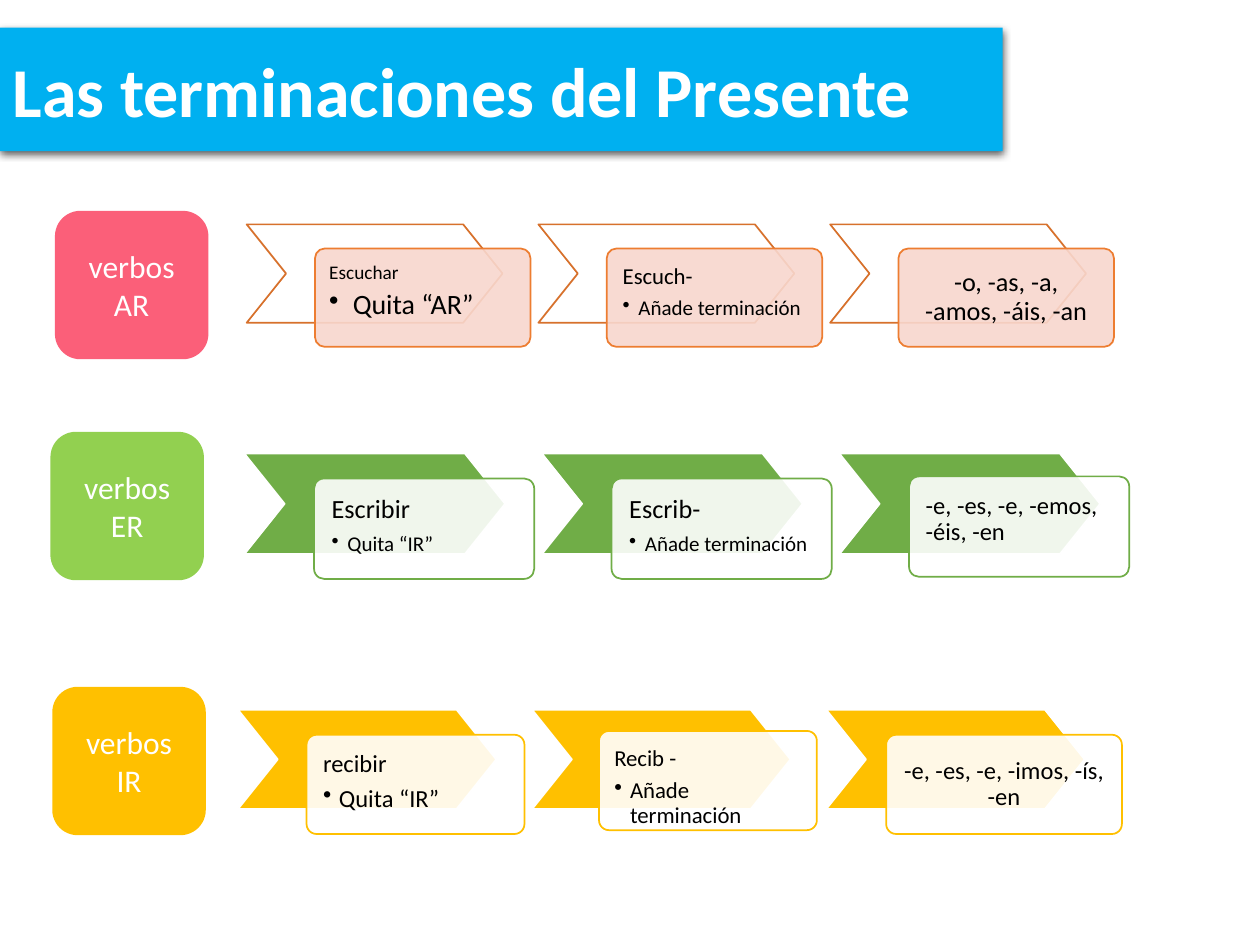
from lxml.etree import SubElement
from pptx import Presentation
from pptx.dml.color import RGBColor
from pptx.enum.shapes import MSO_SHAPE as Preset
from pptx.enum.text import MSO_ANCHOR as Anchor, MSO_AUTO_SIZE as AutoSize, PP_ALIGN as Align
from pptx.oxml import parse_xml
from pptx.oxml.ns import nsdecls, qn
from pptx.util import Pt

COLORS = {
    "white": "FFFFFF", "black": "000000", "sky": "00B0F0",
    "pink": "FB5F79", "rust": "D7712C", "orange": "ED7D31", "peach": "F8D7CE",
    "lime": "92D050", "green": "70AD47", "gold": "FFC000",
}


class VerbSlide:
    font = "Calibri"
    line_width = 1

    def __init__(self, presentation):
        self.slide = presentation.slides.add_slide(presentation.slide_layouts[5])

    def color(self, name):
        return RGBColor.from_string(COLORS[name])

    def place(self, shape, bounds):
        for name, value in zip(("left", "top", "width", "height"), bounds):
            setattr(shape, name, Pt(value))

    def format_frame(self, frame, inset=None, anchor=Anchor.MIDDLE):
        values = {"word_wrap": True, "auto_size": AutoSize.NONE, "vertical_anchor": anchor}
        if inset is not None:
            for side in ("left", "top", "right", "bottom"):
                values[f"margin_{side}"] = Pt(inset)
        for name, value in values.items():
            setattr(frame, name, value)

    def add_text(self, paragraph, text, size, color, bold=False, **layout):
        run = paragraph.add_run()
        run.text = text
        for name, value in {"name": self.font, "size": Pt(size), "bold": bold}.items():
            setattr(run.font, name, value)
        run.font.color.rgb = self.color(color)
        for name, value in layout.items():
            setattr(paragraph, name, value)

    def title(self, text, bounds):
        shape = self.slide.shapes.title
        self.place(shape, bounds)
        properties = shape.element.spPr
        properties.append(parse_xml(
            f'<a:prstGeom {nsdecls("a")} prst="roundRect"><a:avLst>'
            '<a:gd name="adj" fmla="val 16700"/></a:avLst></a:prstGeom>'))
        shape.fill.solid()
        shape.fill.fore_color.rgb = self.color("sky")
        properties.append(parse_xml(
            f'<a:effectLst {nsdecls("a")}><a:outerShdw blurRad="{Pt(4.5)}" dist="{Pt(1.5)}" '
            f'dir="5400000" rotWithShape="0"><a:srgbClr val="{COLORS["black"]}">'
            '<a:alpha val="63000"/></a:srgbClr></a:outerShdw></a:effectLst>'))
        self.format_frame(shape.text_frame)
        self.add_text(shape.text_frame.paragraphs[0], text, 40, "white", True, alignment=Align.LEFT)

    def shape(self, preset, bounds, fill, line, adjustment, opacity=100):
        shape = self.slide.shapes.add_shape(preset, *map(Pt, bounds))
        shape.shadow.inherit = False
        shape.adjustments[0] = adjustment
        shape.fill.solid()
        shape.fill.fore_color.rgb = self.color(fill)
        shape.line.color.rgb = self.color(line)
        shape.line.width = Pt(self.line_width)
        if opacity < 100:
            color = shape.element.spPr.find(qn("a:solidFill")).find(qn("a:srgbClr"))
            SubElement(color, qn("a:alpha")).set("val", str(opacity * 1000))
        return shape

    def label(self, lines, left, top, color):
        shape = self.shape(Preset.ROUNDED_RECTANGLE, (left, top, 86.7, 83.8), color, color, 0.167)
        frame = shape.text_frame
        self.format_frame(frame)
        for index, text in enumerate(lines):
            paragraph = frame.add_paragraph() if index else frame.paragraphs[0]
            self.add_text(paragraph, text, 18, "white", alignment=Align.CENTER)

    def chevron(self, bounds, fill, line):
        self.shape(Preset.CHEVRON, bounds, fill, line, 0.4)

    def card(self, bounds, fill, line, heading, size, inset, bullet=None, centered=False):
        shape = self.shape(Preset.ROUNDED_RECTANGLE, bounds, fill, line, 0.1, 90)
        frame = shape.text_frame
        self.format_frame(frame, inset, Anchor.MIDDLE if centered else Anchor.TOP)
        self.add_text(frame.paragraphs[0], heading, size, "black", line_spacing=0.9,
                      space_after=Pt(0.35 * size),
                      alignment=Align.CENTER if centered else Align.LEFT)
        if bullet:
            self.bullet(frame.add_paragraph(), *bullet)

    def bullet(self, paragraph, text, size, indent):
        self.add_text(paragraph, text, size, "black", level=1, line_spacing=0.9,
                      space_after=Pt(0.15 * size), alignment=Align.LEFT)
        properties = paragraph._p.get_or_add_pPr()
        properties.set("marL", str(Pt(indent)))
        properties.set("indent", str(-Pt(indent)))
        SubElement(properties, qn("a:buChar")).set("char", "•")


ROWS = [
    {
        "label": (["verbos", "AR"], 31.9, 121, "pink"),
        "chevron": (141, 128.2, 146.2, 56.2), "step": 166.7,
        "chevron_colors": ("white", "rust"), "card_colors": ("peach", "orange"),
        "offset": (39, 13.8), "card_width": 123.2,
        "cards": [
            {"heading": "Escuchar", "size": 11, "inset": 6.5, "bullet": ("Quita “AR”", 16, 13.5)},
            {"heading": "Escuch-", "size": 13, "inset": 7.5, "bullet": ("Añade terminación", 12, 9)},
            {"heading": "-o, -as, -a, -amos, -áis, -an", "size": 15, "inset": 8.5, "centered": True},
        ],
    },
    {
        "label": (["verbos ER"], 29.3, 247.3, "lime"),
        "chevron": (139.7, 259.2, 149, 57.4), "step": 170,
        "chevron_colors": ("green", "white"), "card_colors": ("white", "green"),
        "offset": (39.8, 14.2), "card_width": 125.8,
        "cards": [
            {"heading": "Escribir", "size": 15, "inset": 8.4, "bullet": ("Quita “IR”", 12, 9)},
            {"heading": "Escrib-", "size": 15, "inset": 8.4, "bullet": ("Añade terminación", 12, 9)},
            {"heading": "-e, -es, -e, -emos, -éis, -en", "size": 14, "inset": 7.8,
             "nudge": (0, -1.2, 0)},
        ],
    },
    {
        "label": (["verbos", "IR"], 30.4, 393, "gold"),
        "chevron": (136, 405.6, 147.6, 56.7), "step": 168.1,
        "chevron_colors": ("gold", "white"), "card_colors": ("white", "gold"),
        "offset": (39.2, 14.3), "card_width": 124.5,
        "cards": [
            {"heading": "recibir", "size": 14, "inset": 7.8, "bullet": ("Quita “IR”", 14, 9)},
            {"heading": "Recib -", "size": 13, "inset": 7.2, "bullet": ("Añade terminación", 13, 9),
             "nudge": (-1, -2.2, 0)},
            {"heading": "-e, -es, -e, -imos, -ís, -en", "size": 14, "inset": 7.8,
             "centered": True, "nudge": (-5, 0, 10.2)},
        ],
    },
]


def main():
    presentation = Presentation()
    presentation.slide_width, presentation.slide_height = Pt(720), Pt(540)
    page = VerbSlide(presentation)
    page.title("Las terminaciones del Presente", (0, 15.8, 573, 70.6))
    for row in ROWS:
        page.label(*row["label"])
        left, top, width, height = row["chevron"]
        for index, content in enumerate(row["cards"]):
            x = left + index * row["step"]
            page.chevron((x, top, width, height), *row["chevron_colors"])
            shift_x, shift_y, extra_width = content.get("nudge", (0, 0, 0))
            offset_x, offset_y = row["offset"]
            bounds = (x + offset_x + shift_x, top + offset_y + shift_y,
                      row["card_width"] + extra_width, height)
            text = {name: value for name, value in content.items() if name != "nudge"}
            page.card(bounds, *row["card_colors"], **text)
    presentation.save("out.pptx")


if __name__ == "__main__":
    main()
